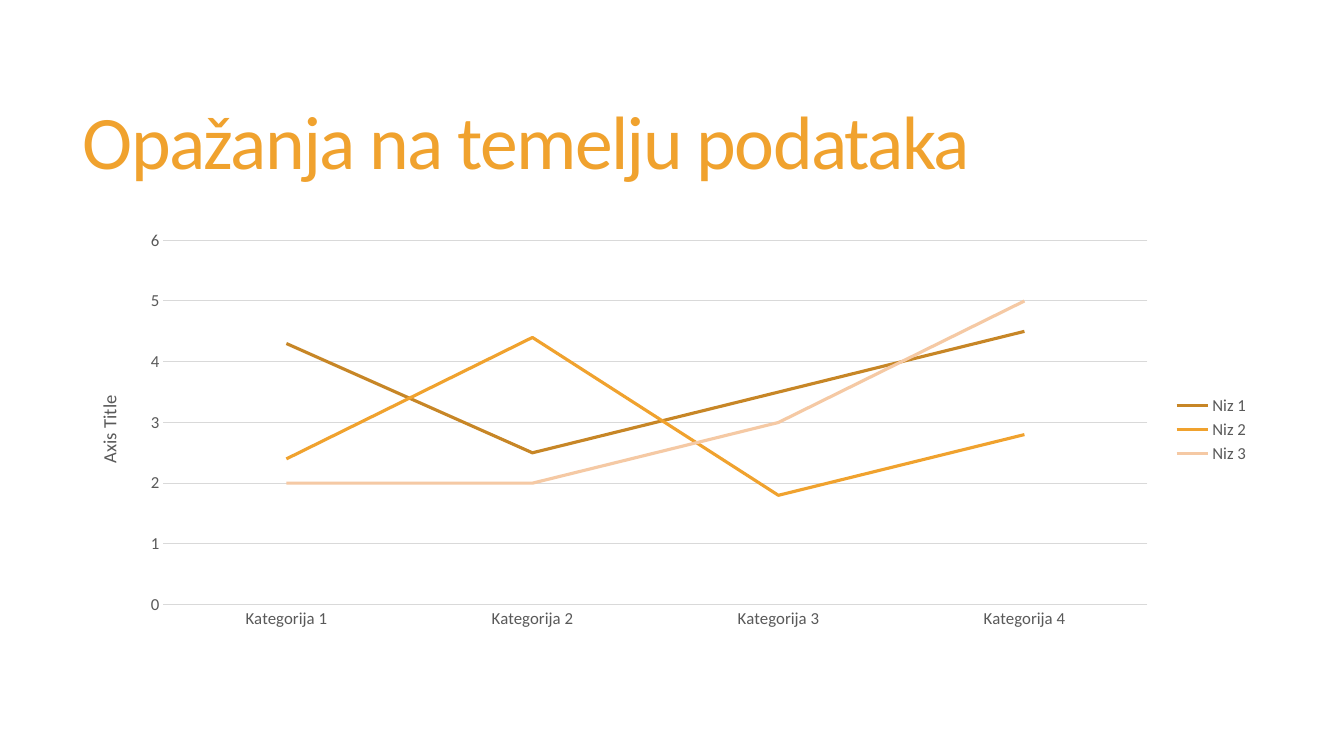
"""Build a slide with a title and a line chart of three series."""
from pptx import Presentation
from pptx.chart.data import CategoryChartData
from pptx.dml.color import RGBColor
from pptx.enum.chart import XL_CHART_TYPE as CHART, XL_LEGEND_POSITION as LEGEND
from pptx.enum.chart import XL_MARKER_STYLE as MARKER, XL_TICK_MARK as TICK
from pptx.enum.text import MSO_ANCHOR as ANCHOR
from pptx.util import Pt

GOLD = RGBColor(0xF0, 0xA2, 0x2E)
BROWN = RGBColor(0xC7, 0x86, 0x26)
PEACH = RGBColor(0xF5, 0xC9, 0xA4)
GREY = RGBColor(0x59, 0x59, 0x59)
PALE = RGBColor(0xD9, 0xD9, 0xD9)
FONT = "Calibri"

TITLE = "Opažanja na temelju podataka"
AXIS_TITLE = "Axis Title"
CATEGORIES = [f"Kategorija {n}" for n in range(1, 5)]
SERIES = [
    ("Niz 1", BROWN, (4.3, 2.5, 3.5, 4.5)),
    ("Niz 2", GOLD, (2.4, 4.4, 1.8, 2.8)),
    ("Niz 3", PEACH, (2, 2, 3, 5)),
]

SLIDE_SIZE = (1344, 756)
TITLE_BOX = (73, 55, 1187, 183)
CHART_BOX = (75, 222, 1185, 415)
PX = 914400 / 100.8


def emu(lengths):
    return [round(n * PX) for n in lengths]


def assign(target, values):
    for name, value in values.items():
        setattr(target, name, value)


def style_font(font, size, color):
    assign(font, {"name": FONT, "size": Pt(size), "bold": False})
    font.color.rgb = color


def style_line(line, color, width):
    line.color.rgb = color
    line.width = Pt(width)


def add_title(slide):
    tf = slide.shapes.add_textbox(*emu(TITLE_BOX)).text_frame
    assign(tf, {"word_wrap": True, "vertical_anchor": ANCHOR.MIDDLE})
    p = tf.paragraphs[0]
    p.line_spacing = 0.85
    r = p.add_run()
    r.text = TITLE
    style_font(r.font, 54, GOLD)
    r.font._element.set("spc", "-120")


def add_line_chart(slide):
    data = CategoryChartData()
    data.categories = CATEGORIES
    for name, _, values in SERIES:
        data.add_series(name, values)
    chart = slide.shapes.add_chart(CHART.LINE, *emu(CHART_BOX), data).chart
    assign(chart, {"has_title": False, "has_legend": True})
    style_font(chart.font, 10, GREY)
    assign(chart.legend, {"position": LEGEND.RIGHT, "include_in_layout": False})
    style_font(chart.legend.font, 12, GREY)

    for series, (_, color, _) in zip(chart.plots[0].series, SERIES):
        series.smooth = False
        series.marker.style = MARKER.NONE
        style_line(series.format.line, color, 2.25)

    cat, val = chart.category_axis, chart.value_axis
    for axis in (cat, val):
        assign(axis, {"major_tick_mark": TICK.NONE, "minor_tick_mark": TICK.NONE})
        style_font(axis.tick_labels.font, 12, GREY)
    style_line(cat.format.line, PALE, 0.75)
    assign(val, {"minimum_scale": 0, "maximum_scale": 6, "major_unit": 1,
                 "has_major_gridlines": True})
    val.format.line.fill.background()
    style_line(val.major_gridlines.format.line, PALE, 0.75)
    tf = val.axis_title.text_frame
    tf.text = AXIS_TITLE
    style_font(tf.paragraphs[0].runs[0].font, 13.3, GREY)


def main():
    prs = Presentation()
    prs.slide_width, prs.slide_height = emu(SLIDE_SIZE)
    slide = prs.slides.add_slide(prs.slide_layouts[6])
    add_title(slide)
    add_line_chart(slide)
    prs.save("out.pptx")


if __name__ == "__main__":
    main()
